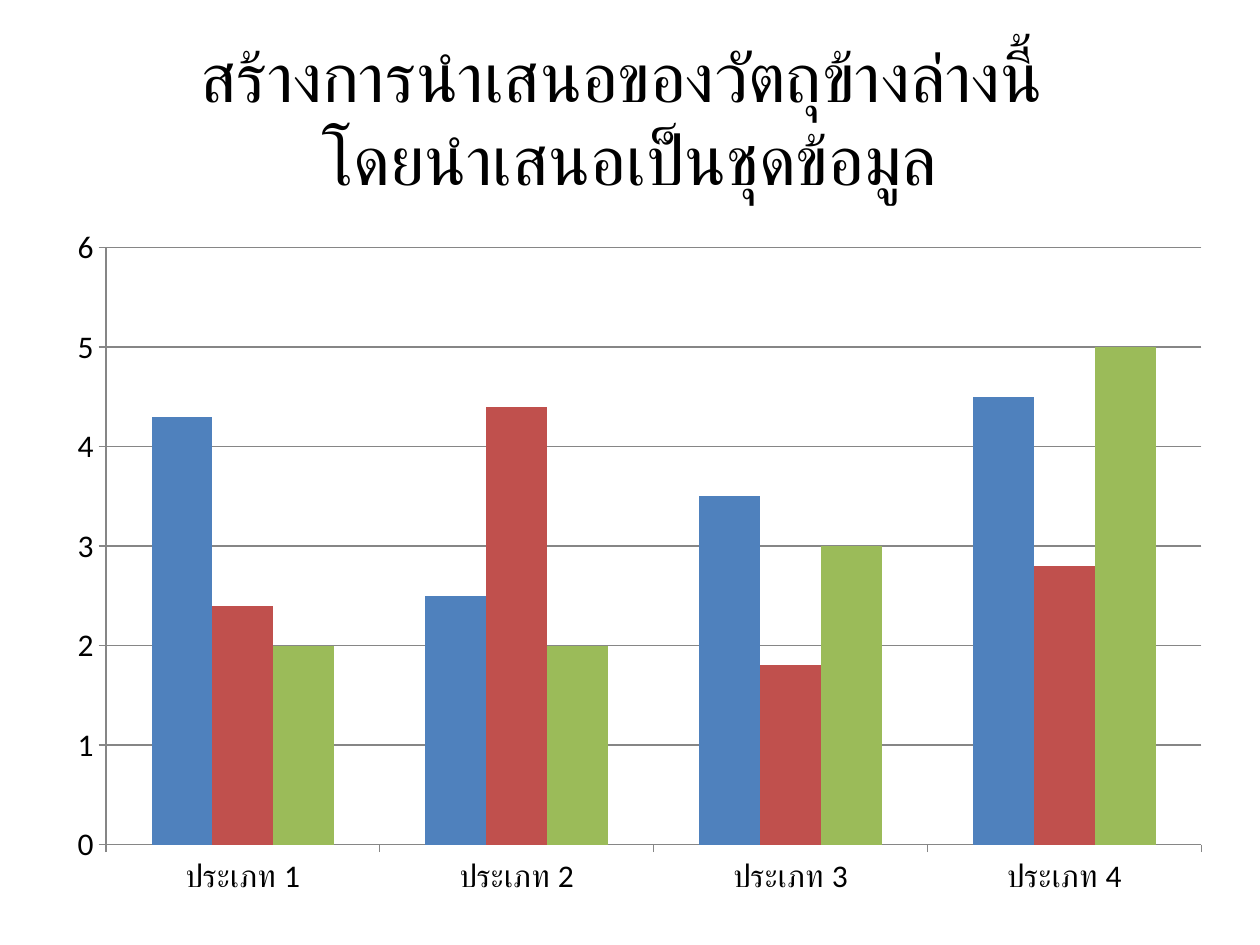
from dataclasses import dataclass

import pptx
import pptx.chart.data
import pptx.dml.color
import pptx.enum.chart
import pptx.enum.text
import pptx.util


@dataclass(frozen=True)
class Theme:
    font: str = "Calibri"
    ink: str = "000000"
    rule: str = "868686"
    series: tuple = ("4F81BD", "C0504D", "9BBB59")
    title_size: float = 39.6
    chart_size: float = 18


def color(value):
    return pptx.dml.color.RGBColor.from_string(value)


def apply(target, values):
    for name, value in values.items():
        setattr(target, name, value)


class SlideBuilder:
    """Places elements by shares of the slide's width and height."""

    def __init__(self, deck, theme):
        self.deck, self.theme = deck, theme
        self.slide = deck.slides.add_slide(deck.slide_layouts[6])

    def area(self, left, top, width, height):
        across, down = self.deck.slide_width, self.deck.slide_height
        return [round(length) for length in
                (left * across, top * down, width * across, height * down)]

    def style_font(self, font, size):
        apply(font, {"name": self.theme.font, "size": pptx.util.Pt(size)})
        font.color.rgb = color(self.theme.ink)

    def style_line(self, line):
        line.color.rgb = color(self.theme.rule)
        line.width = pptx.util.Pt(0.75)

    def title(self, lines, share):
        frame = self.slide.shapes.add_textbox(*self.area(*share)).text_frame
        apply(frame, {"word_wrap": True,
                      "vertical_anchor": pptx.enum.text.MSO_ANCHOR.MIDDLE})
        para = frame.paragraphs[0]
        para.alignment = pptx.enum.text.PP_ALIGN.CENTER
        for index, line in enumerate(lines):
            if index:
                para.add_line_break()
            span = para.add_run()
            span.text = line
            self.style_font(span.font, self.theme.title_size)

    def column_chart(self, categories, series, share):
        data = pptx.chart.data.CategoryChartData()
        data.categories = categories
        for name, values in series.items():
            data.add_series(name, values)
        chart = self.slide.shapes.add_chart(
            pptx.enum.chart.XL_CHART_TYPE.COLUMN_CLUSTERED,
            *self.area(*share), data).chart
        apply(chart, {"has_legend": False, "has_title": False})
        self.style_font(chart.font, self.theme.chart_size)

        plot = chart.plots[0]
        apply(plot, {"gap_width": 150, "overlap": 0, "vary_by_categories": False})
        for column, fill in zip(plot.series, self.theme.series):
            column.format.fill.solid()
            column.format.fill.fore_color.rgb = color(fill)

        for axis in (chart.category_axis, chart.value_axis):
            axis.major_tick_mark = pptx.enum.chart.XL_TICK_MARK.OUTSIDE
            self.style_line(axis.format.line)
        apply(chart.value_axis, {"minimum_scale": 0, "maximum_scale": 6,
                                 "major_unit": 1, "has_major_gridlines": True})
        self.style_line(chart.value_axis.major_gridlines.format.line)


def main():
    deck = pptx.Presentation()
    apply(deck, {"slide_width": pptx.util.Inches(10),
                 "slide_height": pptx.util.Inches(7.5)})
    builder = SlideBuilder(deck, Theme())
    builder.title(["สร้างการนำเสนอของวัตถุข้างล่างนี้ ", "โดยนำเสนอเป็นชุดข้อมูล"],
                  (0.05, 0.04, 0.9, 1 / 6))
    builder.column_chart(
        [f"ประเภท {number}" for number in range(1, 5)],
        {"Series 1": (4.3, 2.5, 3.5, 4.5),
         "Series 2": (2.4, 4.4, 1.8, 2.8),
         "Series 3": (2, 2, 3, 5)},
        (0.043, 0.227, 0.929, 0.735))
    deck.save("out.pptx")


if __name__ == "__main__":
    main()
